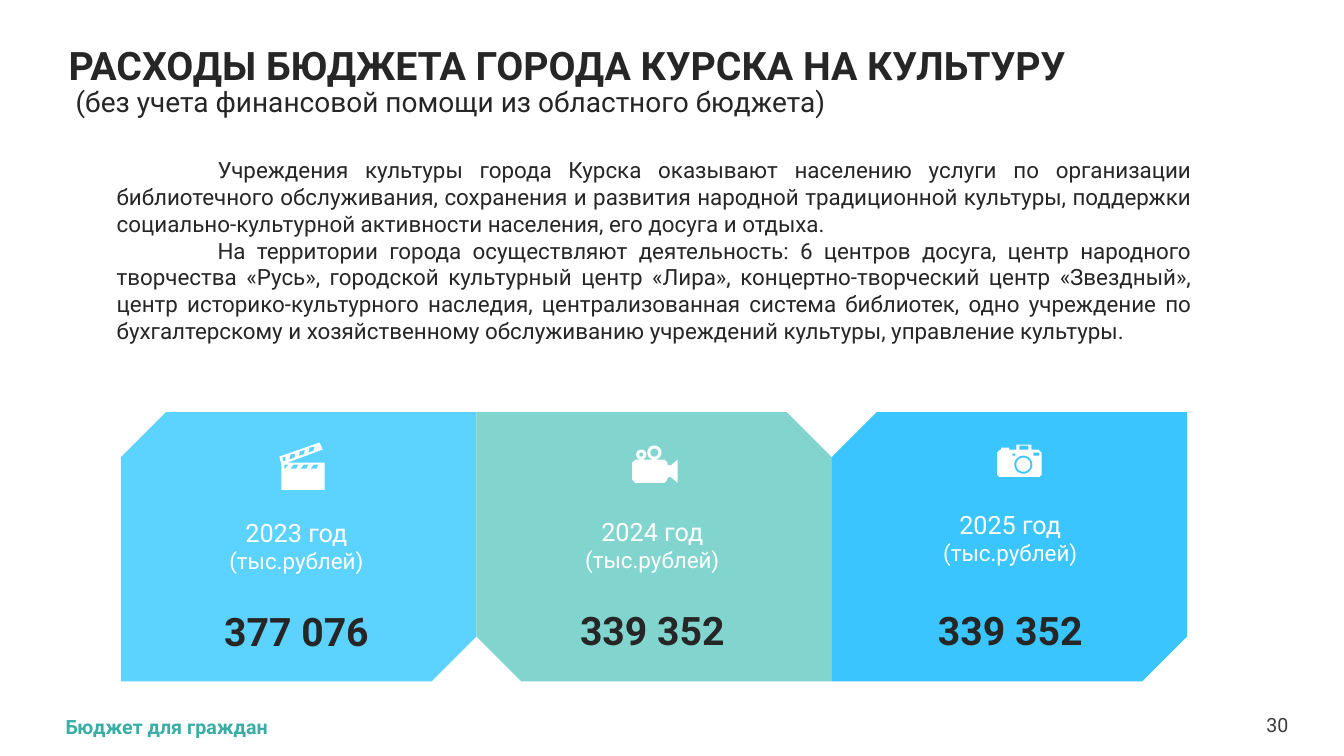
from dataclasses import dataclass
from math import cos, pi, sin

from pptx import Presentation
from pptx.dml.color import RGBColor
from pptx.enum import shapes, text
from pptx.util import Inches, Pt

# Content
TITLE = "РАСХОДЫ БЮДЖЕТА ГОРОДА КУРСКА НА КУЛЬТУРУ"
SUBTITLE = "(без учета финансовой помощи из областного бюджета)"
INTRO = [
    "Учреждения культуры города Курска оказывают населению услуги по организации "
    "библиотечного обслуживания, сохранения и развития народной традиционной культуры, "
    "поддержки социально-культурной активности населения, его досуга и отдыха.",
    "На территории города осуществляют деятельность: 6 центров досуга, центр народного "
    "творчества «Русь», городской культурный центр «Лира», концертно-творческий центр "
    "«Звездный», центр историко-культурного наследия, централизованная система библиотек, "
    "одно учреждение по бухгалтерскому и хозяйственному обслуживанию учреждений культуры, "
    "управление культуры.",
]
UNIT = "(тыс.рублей)"
# year, amount, fill, snips, label centre x, label top, amount top
YEARS = [
    ("2023 год", "377 076", "5CD2FF", (0.167, 0), 2.94, 5.08, 5.98),
    ("2024 год", "339 352", "82D5CF", (0, 0.167), 6.47, 5.07, 5.97),
    ("2025 год", "339 352", "3AC5FF", (0.167, 0), 10.02, 5.00, 5.97),
]
FOOTER = "Бюджет для граждан"
PAGE = "30"


@dataclass(frozen=True)
class Theme:
    font: str = "Roboto"
    dark: str = "262626"
    grey: str = "3C3C3C"
    white: str = "FFFFFF"
    accent: str = "3AADA5"
    heading: int = 28
    subtitle: int = 20
    label: int = 18
    body: int = 16
    small: int = 14


THEME = Theme()


# Text helpers
def style(paragraph, size, color, bold=False, align=text.PP_ALIGN.LEFT):
    paragraph.alignment = align
    font = paragraph.font
    font.name, font.size, font.bold = THEME.font, Pt(size), bold
    font.color.rgb = RGBColor.from_string(color)


def text_frame(left, top, width, height, lines, anchor=text.MSO_ANCHOR.TOP, inset=None):
    """Add a box with one paragraph for each (words, style arguments)."""
    box = slide.shapes.add_textbox(*map(Inches, (left, top, width, height)))
    frame = box.text_frame
    frame.word_wrap = True
    frame.vertical_anchor = anchor
    if inset is not None:
        frame.margin_left = frame.margin_right = Inches(inset)
        frame.margin_top = frame.margin_bottom = Inches(inset)
    fill_lines(frame, lines)
    return frame


def fill_lines(frame, lines):
    frame.text = "\n".join(words for words, _ in lines)
    for paragraph, (_, look) in zip(frame.paragraphs, lines):
        style(paragraph, *look)


# Icon geometry, in inches on the slide
def circle(x, y, radius, steps=32):
    angles = [2 * pi * step / steps for step in range(steps)]
    return [(x + radius * cos(a), y + radius * sin(a)) for a in angles]


def rectangle(left, top, right, bottom):
    return [(left, top), (right, top), (right, bottom), (left, bottom)]


def shifted(points, dx, dy=0.0):
    return [(x + dx, y + dy) for x, y in points]


ARM_STRIPE = [(2.93, 4.50), (2.88, 4.51), (2.87, 4.56), (2.92, 4.54)]
BOARD_STRIPE = [(2.91, 4.61), (2.96, 4.61), (2.94, 4.65), (2.88, 4.65)]
CLAPPER = [
    [(2.77, 4.53), (3.17, 4.39), (3.20, 4.46), (2.85, 4.59),
     (3.22, 4.59), (3.22, 4.86), (2.79, 4.86), (2.79, 4.60)],
    [(2.83, 4.53), (2.80, 4.54), (2.81, 4.58), (2.83, 4.57)],
    [(2.82, 4.61), (2.86, 4.61), (2.83, 4.65), (2.82, 4.65)],
    *[shifted(ARM_STRIPE, 0.095 * i, -0.035 * i) for i in range(3)],
    *[shifted(BOARD_STRIPE, 0.1 * i) for i in range(3)],
]
FILM_CAMERA = [
    [(6.27, 4.59), (6.30, 4.56), (6.59, 4.56), (6.62, 4.59), (6.62, 4.61), (6.65, 4.62),
     (6.72, 4.56), (6.72, 4.79), (6.65, 4.73), (6.62, 4.74), (6.62, 4.76), (6.59, 4.79),
     (6.30, 4.79), (6.27, 4.76)],
    circle(6.36, 4.51, 0.05), circle(6.36, 4.51, 0.02),
    circle(6.49, 4.49, 0.07), circle(6.49, 4.49, 0.04),
]
PHOTO_CAMERA = [
    [(9.89, 4.49), (9.92, 4.46), (9.93, 4.46), (9.93, 4.44), (10.01, 4.44), (10.01, 4.46),
     (10.08, 4.46), (10.08, 4.41), (10.23, 4.41), (10.23, 4.46), (10.30, 4.46),
     (10.33, 4.49), (10.33, 4.71), (10.31, 4.73), (9.91, 4.73), (9.89, 4.71)],
    circle(10.15, 4.61, 0.09), circle(10.15, 4.61, 0.07),
    rectangle(10.04, 4.50, 10.07, 4.52),
    rectangle(10.25, 4.49, 10.31, 4.52),
    rectangle(10.11, 4.42, 10.20, 4.46),
]


def paint(shape, color):
    shape.shadow.inherit = False
    shape.fill.solid()
    shape.fill.fore_color.rgb = RGBColor.from_string(color)
    shape.line.fill.background()


def draw_icon(contours):
    outlines = [[(Inches(x), Inches(y)) for x, y in points] for points in contours]
    builder = slide.shapes.build_freeform(*outlines[0][0])
    for points in outlines:
        builder.move_to(*points[0])
        builder.add_line_segments(points[1:], close=True)
    paint(builder.convert_to_shape(), THEME.white)


presentation = Presentation()
presentation.slide_width, presentation.slide_height = Inches(13.33), Inches(7.5)
slide = presentation.slides.add_slide(presentation.slide_layouts[5])

# Title
title = slide.shapes.title
title.left, title.top, title.width, title.height = map(Inches, (0.58, 0.44, 11.88, 0.76))
heading = title.text_frame
heading.auto_size = text.MSO_AUTO_SIZE.NONE
heading.vertical_anchor = text.MSO_ANCHOR.MIDDLE
fill_lines(heading, [(TITLE, (THEME.heading, THEME.dark, True)),
                     (SUBTITLE, (THEME.subtitle, THEME.dark))])
for line in heading.paragraphs:
    line.line_spacing = 0.9
    line.space_before = Pt(0)
heading.paragraphs[1]._p.get_or_add_pPr().set("marL", str(Inches(0.07)))

# Introduction, with first-line indents
body_look = (THEME.body, THEME.dark, False, text.PP_ALIGN.JUSTIFY)
intro = text_frame(1.06, 1.5, 10.86, 2.0, [(words, body_look) for words in INTRO])
for paragraph in intro.paragraphs:
    paragraph._p.get_or_add_pPr().set("indent", str(Inches(1)))

# Year cards
CARD_LEFT, CARD_TOP, CARD_WIDTH, CARD_HEIGHT = 1.2, 4.09, 3.525, 2.67
LABEL_WIDTH = 2.5
CENTER = text.PP_ALIGN.CENTER
icons = [CLAPPER, FILM_CAMERA, PHOTO_CAMERA]
for i, (year, amount, color, snips, center, label_top, amount_top) in enumerate(YEARS):
    card = slide.shapes.add_shape(
        shapes.MSO_SHAPE.SNIP_2_DIAG_RECTANGLE, Inches(CARD_LEFT + i * CARD_WIDTH),
        Inches(CARD_TOP), Inches(CARD_WIDTH), Inches(CARD_HEIGHT))
    card.adjustments[0], card.adjustments[1] = snips
    paint(card, color)
    left = center - LABEL_WIDTH / 2
    text_frame(left, label_top, LABEL_WIDTH, 0.67,
               [(year, (THEME.label, THEME.white, False, CENTER)),
                (UNIT, (THEME.body, THEME.white, False, CENTER))], text.MSO_ANCHOR.MIDDLE)
    text_frame(left, amount_top, LABEL_WIDTH, 0.56,
               [(amount, (THEME.heading, THEME.dark, True, CENTER))])
    draw_icon(icons[i])

# Footer and page number
text_frame(0.65, 7.09, 11.89, 0.24, [(FOOTER, (THEME.small, THEME.accent, True))], inset=0)
text_frame(12.28, 7.07, 0.5, 0.24,
           [(PAGE, (THEME.small, THEME.grey, False, text.PP_ALIGN.RIGHT))],
           text.MSO_ANCHOR.MIDDLE, inset=0)

presentation.save("out.pptx")
